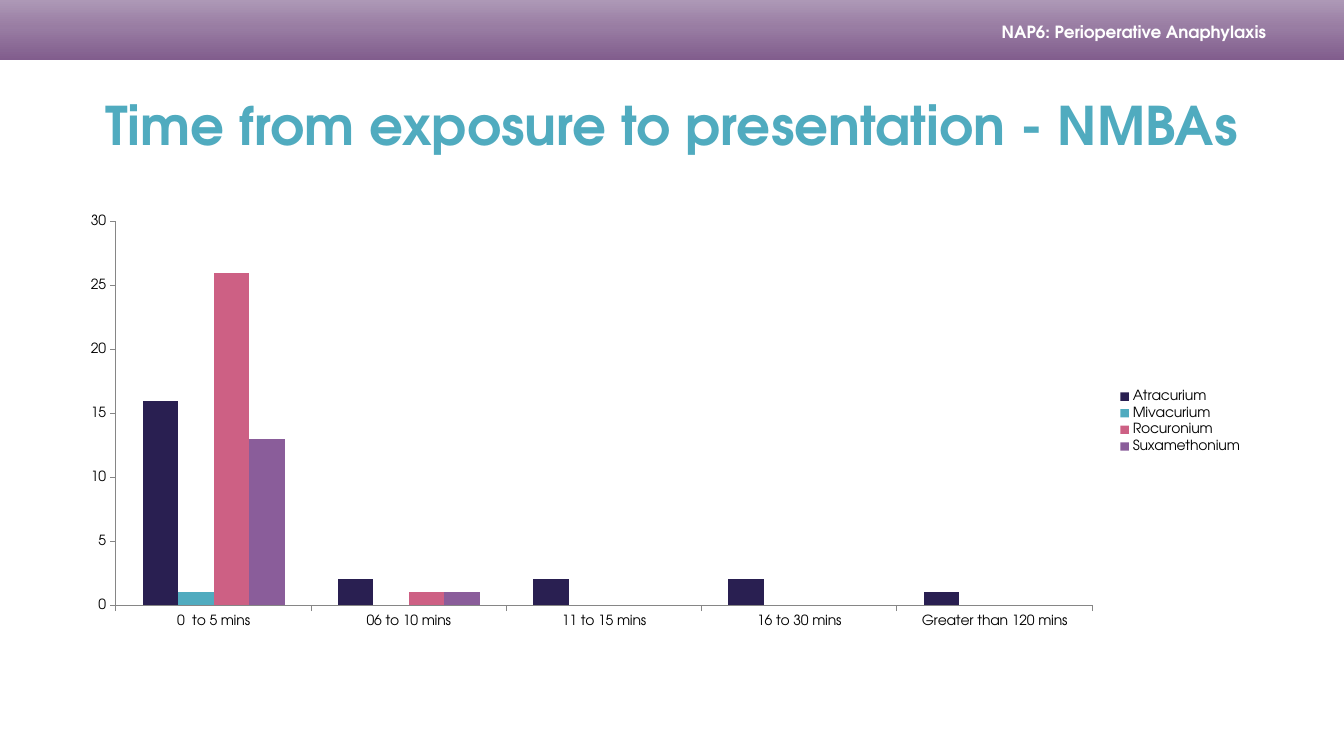
from copy import deepcopy
from dataclasses import dataclass

from pptx import Presentation
from pptx.chart.data import CategoryChartData
from pptx.dml.color import RGBColor
from pptx.enum.chart import XL_CHART_TYPE, XL_LEGEND_POSITION, XL_TICK_MARK
from pptx.enum.shapes import MSO_SHAPE
from pptx.enum.text import MSO_ANCHOR, PP_ALIGN
from pptx.oxml.ns import qn
from pptx.slide import Slide
from pptx.util import Emu, Pt

PX = 9525
FONT = "TeX Gyre Adventor"
WHITE = RGBColor(0xFF, 0xFF, 0xFF)
BLACK = RGBColor(0x00, 0x00, 0x00)
GRAY = RGBColor(0x86, 0x86, 0x86)
NAVY = RGBColor(0x29, 0x1F, 0x51)
TEAL = RGBColor(0x50, 0xAB, 0xBF)
PINK = RGBColor(0xCD, 0x60, 0x84)
PURPLE = RGBColor(0x8A, 0x5D, 0x9A)
PLUM = RGBColor(0x81, 0x5D, 0x8D)
MAUVE = RGBColor(0x99, 0x7D, 0xA3)
LILAC = RGBColor(0xAD, 0x98, 0xB6)


@dataclass(frozen=True)
class Box:
    left: int
    top: int
    width: int
    height: int

    def emu(self) -> tuple[Emu, ...]:
        sides = (self.left, self.top, self.width, self.height)
        return tuple(Emu(side * PX) for side in sides)


@dataclass(frozen=True)
class Drug:
    name: str
    color: RGBColor
    counts: tuple[int | None, ...]


@dataclass(frozen=True)
class Stop:
    place: float
    color: RGBColor


TIMES = ("0  to 5 mins", "06 to 10 mins", "11 to 15 mins",
         "16 to 30 mins", "Greater than 120 mins")
DRUGS = (
    Drug("Atracurium", NAVY, (16, 2, 2, 2, 1)),
    Drug("Mivacurium", TEAL, (1, None, None, None, None)),
    Drug("Rocuronium", PINK, (26, 1, None, None, None)),
    Drug("Suxamethonium", PURPLE, (13, 1, None, None, None)),
)
STOPS = (Stop(0, PLUM), Stop(0.55, MAUVE), Stop(1, LILAC))


def add_text(slide: Slide, box: Box, text: str, *, size: int,
             color: RGBColor, align: PP_ALIGN) -> None:
    frame = slide.shapes.add_textbox(*box.emu()).text_frame
    frame.word_wrap = True
    frame.vertical_anchor = MSO_ANCHOR.MIDDLE
    frame.margin_left = frame.margin_right = 0
    frame.margin_top = frame.margin_bottom = 0
    para = frame.paragraphs[0]
    para.alignment = align
    run = para.add_run()
    run.text = text
    run.font.name = FONT
    run.font.size = Pt(size)
    run.font.bold = True
    run.font.color.rgb = color


def add_band(slide: Slide, box: Box) -> None:
    """Draw the header band, shaded from the bottom edge upwards."""
    band = slide.shapes.add_shape(MSO_SHAPE.RECTANGLE, *box.emu())
    band.shadow.inherit = False
    band.line.fill.background()
    band.fill.gradient()
    band.fill.gradient_angle = 90
    marks = next(band._element.spPr.iter(qn("a:gsLst")))
    marks.insert(1, deepcopy(marks[0]))
    for mark, stop in zip(band.fill.gradient_stops, STOPS):
        mark.position = stop.place
        mark.color.rgb = stop.color


def add_bars(slide: Slide, box: Box) -> None:
    data = CategoryChartData()
    data.categories = TIMES
    for drug in DRUGS:
        data.add_series(drug.name, drug.counts)
    chart = slide.shapes.add_chart(
        XL_CHART_TYPE.COLUMN_CLUSTERED, *box.emu(), data).chart
    chart.has_title = False
    chart.font.name = FONT
    chart.font.size = Pt(10)
    chart.font.color.rgb = BLACK

    chart.has_legend = True
    chart.legend.position = XL_LEGEND_POSITION.RIGHT
    chart.legend.include_in_layout = False

    for axis in (chart.category_axis, chart.value_axis):
        axis.has_major_gridlines = False
        axis.major_tick_mark = XL_TICK_MARK.OUTSIDE
        axis.minor_tick_mark = XL_TICK_MARK.NONE
        axis.format.line.color.rgb = GRAY
        axis.format.line.width = Pt(0.75)
    chart.value_axis.minimum_scale = 0
    chart.value_axis.maximum_scale = 30
    chart.value_axis.major_unit = 5

    plot = chart.plots[0]
    plot.gap_width = 150
    plot.vary_by_categories = False
    for series, drug in zip(plot.series, DRUGS):
        series.format.fill.solid()
        series.format.fill.fore_color.rgb = drug.color


def main() -> None:
    deck = Presentation()
    deck.slide_width = Emu(1280 * PX)
    deck.slide_height = Emu(720 * PX)
    slide = deck.slides.add_slide(deck.slide_layouts[6])
    add_band(slide, Box(0, 0, 1280, 57))
    add_text(slide, Box(802, 17, 404, 27), "NAP6: Perioperative Anaphylaxis",
             size=12, color=WHITE, align=PP_ALIGN.RIGHT)
    add_text(slide, Box(64, 58, 1152, 120),
             "Time from exposure to presentation - NMBAs",
             size=38, color=TEAL, align=PP_ALIGN.CENTER)
    add_bars(slide, Box(64, 197, 1129, 409))
    deck.save("out.pptx")


if __name__ == "__main__":
    main()
